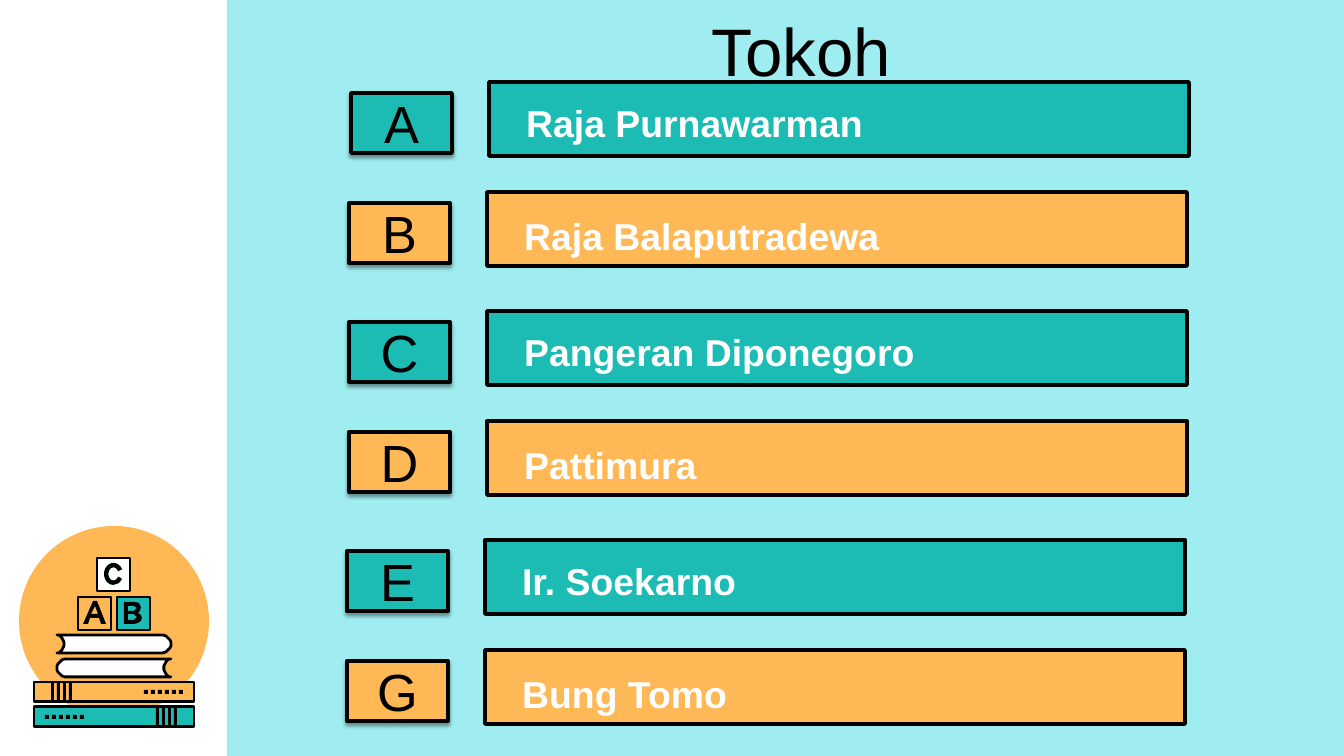
from math import cos, pi, sin

from lxml.etree import SubElement
from pptx import Presentation
from pptx.dml.color import RGBColor
from pptx.enum.shapes import MSO_SHAPE
from pptx.enum.text import MSO_ANCHOR, MSO_AUTO_SIZE, PP_ALIGN
from pptx.oxml.ns import qn
from pptx.util import Pt

WIDTH, HEIGHT = 1344, 756
SCALE = 9144000 / WIDTH  # EMU in one px
TEAL, ORANGE, SKY = "1CBBB4", "FEB856", "9FEDF0"
BLACK, WHITE = "000000", "FFFFFF"

# letter, name, left edge of the bar
FIGURES = [
    ("A", "Raja Purnawarman", 489),
    ("B", "Raja Balaputradewa", 487),
    ("C", "Pangeran Diponegoro", 487),
    ("D", "Pattimura", 487),
    ("E", "Ir. Soekarno", 485),
    ("G", "Bung Tomo", 485),
]

# Outlines of the block letters: outer edge first, then the holes
LETTER_A = [
    [(93, 601), (97, 601), (106, 624), (101, 624), (99, 618),
     (90, 618), (88, 624), (83, 624)],
    [(95, 606), (91, 614), (98, 614)],
]
LETTER_B = [
    [(124, 602), (135, 602), (139, 603), (141, 607), (140, 611),
     (138, 613), (141, 615), (142, 618), (141, 621), (138, 623),
     (134, 624), (124, 624)],
    [(128, 606), (128, 611), (134, 611), (137, 608), (134, 606)],
    [(128, 614), (128, 620), (134, 620), (137, 617), (134, 614)],
]


def emu(px):
    return round(px * SCALE)


def rgb(color):
    return RGBColor.from_string(color)


def paint(shape, fill, line_width=0):
    shape.shadow.inherit = False
    shape.fill.solid()
    shape.fill.fore_color.rgb = rgb(fill)
    if line_width:
        shape.line.color.rgb = rgb(BLACK)
        shape.line.width = Pt(line_width)
    else:
        shape.line.fill.background()


def add_box(slide, box, fill, line_width=0, kind=MSO_SHAPE.RECTANGLE):
    shape = slide.shapes.add_shape(kind, *map(emu, box))
    paint(shape, fill, line_width)
    return shape


def add_outline(slide, contours, fill, line_width=0):
    first, *holes = contours
    builder = slide.shapes.build_freeform(*first[0], scale=SCALE)
    builder.add_line_segments(first[1:], close=True)
    for hole in holes:
        builder.move_to(*hole[0])
        builder.add_line_segments(hole[1:], close=True)
    paint(builder.convert_to_shape(), fill, line_width)


def write(shape, text, size, color, align=PP_ALIGN.LEFT, bold=False):
    paragraph = shape.text_frame.paragraphs[0]
    paragraph.alignment = align
    run = paragraph.add_run()
    run.text = text
    run.font.name = "Arial"
    run.font.size = Pt(size)
    run.font.bold = bold
    run.font.color.rgb = rgb(color)


def add_label(slide, box, text, size, color, **style):
    label = slide.shapes.add_textbox(*map(emu, box))
    label.text_frame.word_wrap = True
    write(label, text, size, color, **style)
    return label


def add_soft_shadow(shape):
    effects = shape._element.spPr.find(qn("a:effectLst"))
    shadow = SubElement(effects, qn("a:outerShdw"), blurRad=str(Pt(2)),
                        dist=str(Pt(1.5)), dir="5400000", rotWithShape="0")
    tone = SubElement(shadow, qn("a:srgbClr"), val=BLACK)
    SubElement(tone, qn("a:alpha"), val="40000")


def add_figure(slide, index, letter, name, left):
    pair, lower = divmod(index, 2)
    top = 82 + 229 * pair + 110 * lower
    color = ORANGE if lower else TEAL

    tile = add_box(slide, (left - 138, top + 11, 101, 60), color, 2)
    add_soft_shadow(tile)
    tile.text_frame.word_wrap = False
    tile.text_frame.vertical_anchor = MSO_ANCHOR.MIDDLE
    write(tile, letter, 28, BLACK, PP_ALIGN.CENTER)

    add_box(slide, (left, top, 700, 74), color, 2)
    label = add_label(slide, (left + 24, top + 12 + 3 * lower, 630, 59),
                      name, 20, WHITE, bold=True)
    label.text_frame.auto_size = MSO_AUTO_SIZE.SHAPE_TO_FIT_TEXT


def add_spine_book(slide, top, color, mirrored):
    left, width = 34, 160

    def add_mark(offset, drop, mark_width, mark_height):
        if mirrored:
            offset = width - offset - mark_width
        add_box(slide, (left + offset, top + drop, mark_width, mark_height), BLACK)

    add_box(slide, (left, top, width, 20), color, 1.5)
    for band in range(4):
        add_mark(17 + 6 * band, 0, 3, 20)
    for dot in range(6):
        add_mark(110 + 7 * dot, 8, 4, 4)


def add_open_book(slide, top, mirrored):
    left, right, radius = 57, 171, 9
    middle = top + radius

    def arc(center, depth, start, end):
        angles = [start + (end - start) * step / 12 for step in range(13)]
        return [(center + depth * cos(a), middle + radius * sin(a)) for a in angles]

    cover = arc(right - 11, 11, -pi / 2, pi / 2)
    pages = arc(left, 7, pi / 2, -pi / 2)
    points = cover + pages
    if mirrored:
        points = [(left + right - x, y) for x, y in points]
    add_outline(slide, [points], WHITE, 1.5)


def add_emblem(slide):
    add_box(slide, (19, 526, 190, 190), ORANGE, kind=MSO_SHAPE.OVAL)
    add_spine_book(slide, 682, ORANGE, mirrored=False)
    add_spine_book(slide, 707, TEAL, mirrored=True)

    # Letter blocks
    for left, top, color in [(78, 597, ORANGE), (117, 597, TEAL), (97, 558, WHITE)]:
        add_box(slide, (left, top, 33, 33), color, 1.5)
    add_outline(slide, LETTER_A, BLACK)
    add_outline(slide, LETTER_B, BLACK)
    letter_c = add_box(slide, (104, 563, 19, 22), BLACK, kind=MSO_SHAPE.BLOCK_ARC)
    for number, value in enumerate((17.57, 198.9, 0.23)):
        letter_c.adjustments[number] = value

    add_open_book(slide, 635, mirrored=False)
    add_open_book(slide, 659, mirrored=True)


def main():
    deck = Presentation()
    deck.slide_width, deck.slide_height = emu(WIDTH), emu(HEIGHT)
    slide = deck.slides.add_slide(deck.slide_layouts[6])

    # Side panel and emblem
    add_box(slide, (227, 0, WIDTH - 227, HEIGHT), SKY)
    add_emblem(slide)

    # Title
    title = add_label(slide, (259, -3, 1085, 86), "Tokoh", 36, BLACK,
                      align=PP_ALIGN.CENTER)
    title.text_frame.margin_top = emu(12)

    # Lettered list of figures
    for index, figure in enumerate(FIGURES):
        add_figure(slide, index, *figure)

    deck.save("out.pptx")


if __name__ == "__main__":
    main()
